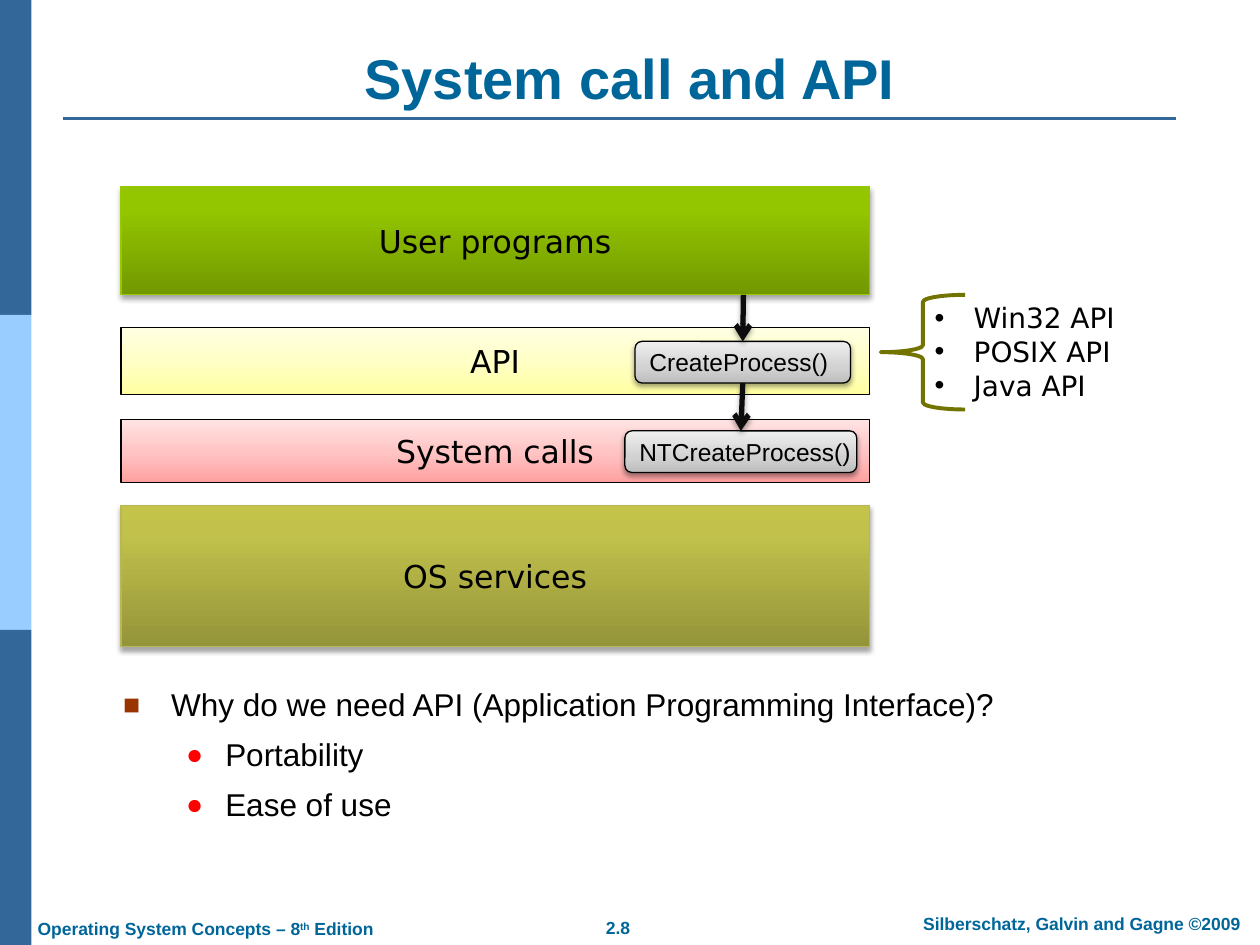
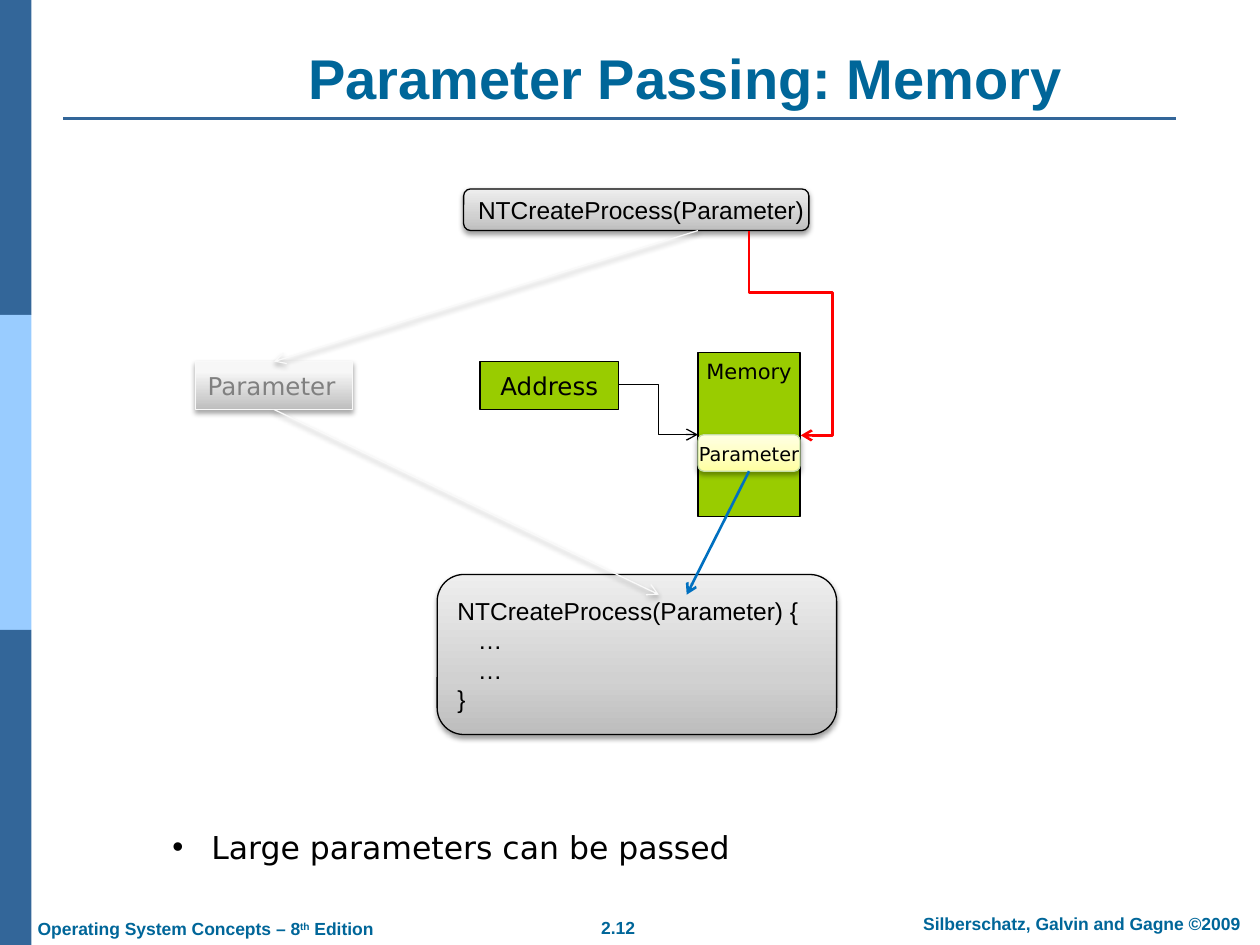
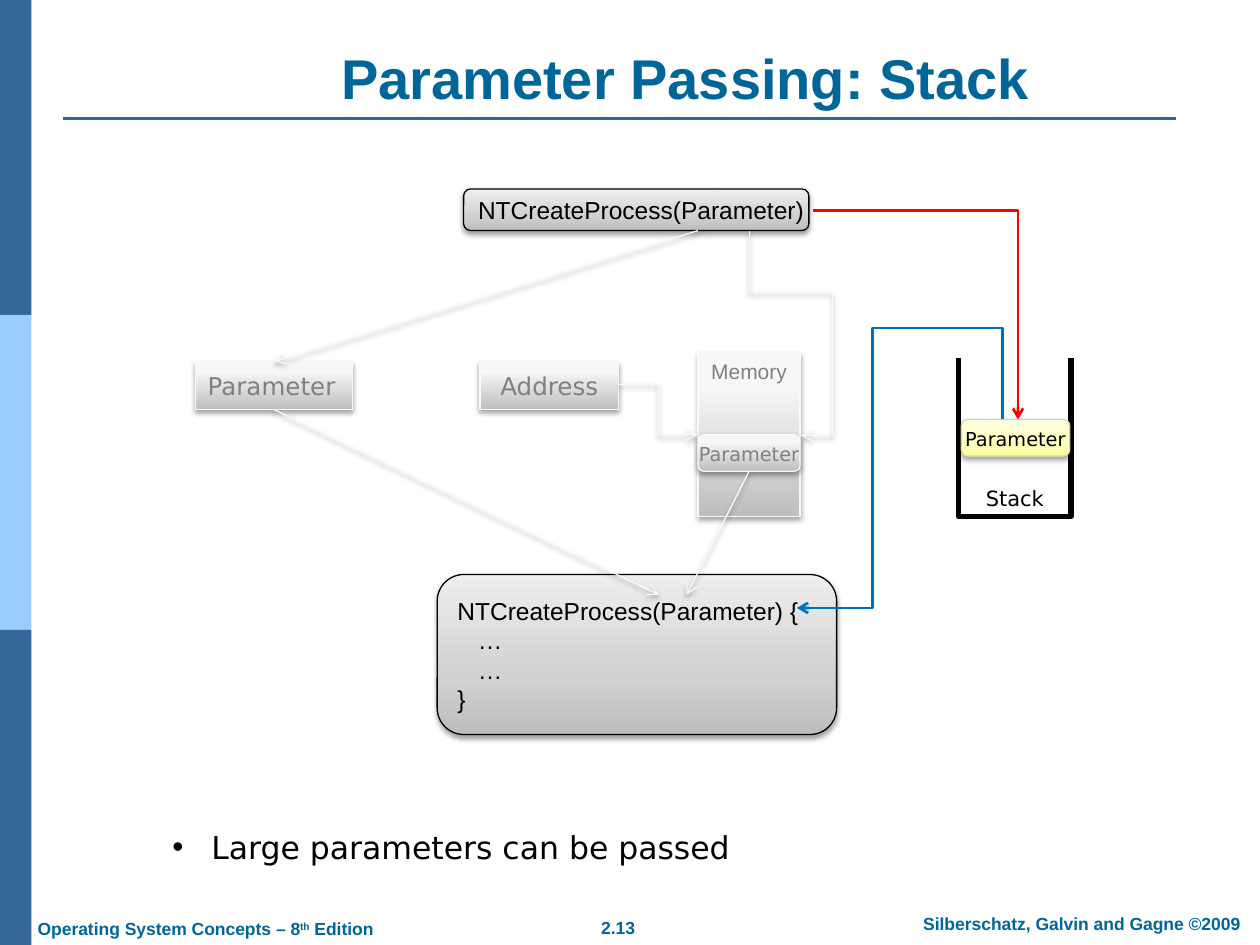
import collections
import lxml.etree
import pptx
import pptx.dml.color
import pptx.enum.shapes
import pptx.enum.text
import pptx.oxml.ns
import pptx.util

Inches, Pt = pptx.util.Inches, pptx.util.Pt
FORM = pptx.enum.shapes.MSO_SHAPE
LINK = pptx.enum.shapes.MSO_CONNECTOR
ALIGN = pptx.enum.text.PP_ALIGN
ANCHOR = pptx.enum.text.MSO_ANCHOR
LEFT, MID = ALIGN.LEFT, ALIGN.CENTER

# Theme
Look = collections.namedtuple("Look", "fill edge width ink shade", defaults=("000000", None))
Pen = collections.namedtuple("Pen", "color width shade", defaults=(None,))
SOFT, DEEP = (35, 1.8), (38, 1.6)  # shadow opacity in percent, offset in points
CREAM = ((0, "FFFFA2"), (50, "FFFFC6"), (100, "FFFFE3"))


class Theme:
    sans, wide = "Arial", "DejaVu Sans"
    title, body, item, code, label, small, foot = 32, 18, 16, 14, 12, 11, 10
    blue, band, pale = "006699", "336699", "99CCFF"
    black, square, disc = "000000", "993300", "FF0000"
    looks = {
        "green": Look(((0, "729800"), (80, "94C600"), (100, "95C700")), "96C800", 0.75, shade=SOFT),
        "olive": Look(((0, "94943A"), (80, "C1C14C"), (100, "C4C44A")), "B7B758", 0.75, shade=SOFT),
        "yellow": Look(CREAM, "000000", 0.75),
        "pink": Look(((0, "FFA0A0"), (50, "FFC5C5"), (100, "FFE3E3")), "000000", 0.75),
        "gray": Look(((0, "BDBDBD"), (35, "D1D1D1"), (100, "EEEEEE")), "000000", 0.75, shade=DEEP),
        "ghost": Look(((0, "BEBEBE"), (80, "F7F7F7"), (100, "F8F8F8")), "F9F9F9", 0.75, "808080", SOFT),
        "lime": Look("99CC00", "000000", 0.75),
        "cream": Look(CREAM, "C6DEA5", 0.75, shade=SOFT),
        "frame": Look(None, "000000", 3),
        "brace": Look(None, "737300", 2.25),
        "cover": Look("FFFFFF", None, 0),
        "band": Look(band, None, 0),
        "pale": Look(pale, None, 0),
    }
    pens = {
        "rule": Pen(band, 1.5),
        "bold": Pen("0D0D0D", 3, SOFT),
        "ghost": Pen("F9F9F9", 0.75, SOFT),
        "thin": Pen("000000", 0.75),
        "red": Pen("FF0000", 1.5),
        "blue": Pen("0070C0", 1.5),
    }
    # bullet: left margin, hanging indent, mark, colour, space before
    marks = {
        "dot": (0.31, 0.31, "•", None, 0),
        "square": (0.38, 0.38, "■", square, 7),
        "disc": (0.81, 0.31, "●", disc, 7),
    }


# Content
Box = collections.namedtuple(
    "Box", "at text look form size face align anchor",
    defaults=(FORM.RECTANGLE, Theme.body, Theme.wide, MID, ANCHOR.MIDDLE))


def tag(at, *text):
    return Box(at, text, "gray", FORM.ROUNDED_RECTANGLE, Theme.code, Theme.sans, LEFT)


def chip(at):
    return Box(at, ["Parameter"], "cream", FORM.ROUNDED_RECTANGLE, Theme.small, anchor=ANCHOR.TOP)


BOXES = {
    "os": Box((0.96, 4.01, 5.94, 1.12), ["OS services"], "olive"),
    "sys": Box((0.96, 3.33, 5.94, 0.5), ["System calls"], "pink"),
    "user": Box((0.96, 1.48, 5.94, 0.86), ["User programs"], "green"),
    "api": Box((0.96, 2.6, 5.94, 0.53), ["API"], "yellow"),
    "brace": Box((6.99, 2.34, 0.67, 0.91), [], "brace", FORM.LEFT_BRACE),
    "create": tag((5.04, 2.71, 1.71, 0.33), "CreateProcess()"),
    "native": tag((4.96, 3.42, 1.84, 0.33), "NTCreateProcess()"),
    "call": tag((3.68, 1.5, 2.74, 0.33), "NTCreateProcess(Parameter)"),
    "code": tag((3.47, 4.56, 3.17, 1.27), "NTCreateProcess(Parameter) {", "   …", "   …", "}"),
    "value": Box((1.55, 2.87, 1.25, 0.38), ["Parameter"], "ghost", size=Theme.code, align=LEFT),
    "address": Box((3.81, 2.87, 1.1, 0.38), ["Address"], "lime", size=Theme.code),
    "memory": Box((5.54, 2.8, 0.81, 1.3), ["Memory"], "lime", size=Theme.label, anchor=ANCHOR.TOP),
    "chip": chip((5.54, 3.45, 0.81, 0.29)),
    "stack": Box((7.61, 2.8, 0.89, 1.3), ["Stack"], "frame", size=Theme.label, anchor=ANCHOR.BOTTOM),
    "cover": Box((7.57, 2.64, 0.99, 0.2), [], "cover"),
    "pushed": chip((7.63, 3.33, 0.86, 0.29)),
}

# Straight arrows: start, end, pen, joined start, joined end
ARROWS = {
    "enter": ((5.9, 2.34), (5.89, 2.72), "bold", None, ("create", 0)),
    "descend": ((5.89, 3.04), (5.88, 3.42), "bold", ("create", 2), ("native", 0)),
    "send": ((5.54, 1.83), (2.18, 2.87), "ghost", None, ("value", 0)),
    "fetch": ((2.18, 3.24), (5.23, 4.72), "ghost", ("value", 2), None),
    "load": ((5.95, 3.74), (5.45, 4.72), "blue", ("chip", 2), None),
}

# Bent arrows: frame, turn, flips, preset, adjustments, pen
BENDS = {
    "store": ((5.34, 2.44, 1.62, 0.41), 270, "h", "bentConnector4", (0.299, 1.617), "red"),
    "point": ((4.91, 3.05, 0.63, 0.4), 0, "", "bentConnector3", (0.5,), "thin"),
    "push": ((6.45, 1.67, 1.63, 1.66), 0, "", "bentConnector2", (), "red"),
    "pop": ((6.39, 3.26, 1.5, 1.63), 270, "hv", "bentConnector4", (-0.482, 0.631), "blue"),
}

KINDS = ((1.27, 6.52, 4.66, 0.4), Theme.body, Theme.wide, False,
         [("dot", "Large parameters can be passed")])

# Slides: title, title left, number, parts from back to front, lists.
# A part is a name, or a name with the changes it takes on that slide.
GHOST = {"look": "ghost"}
SLIDES = [
    ("System call and API", 0.5, "2.8",
     ["os", "sys", "user", "api", "brace", "create", "native", "descend", "enter"],
     [((7.32, 2.34, 1.7, 0.94), Theme.item, Theme.wide, False,
       [("dot", "Win32 API"), ("dot", "POSIX API"), ("dot", "Java API")]),
      ((0.88, 5.39, 9, 1.68), Theme.body, Theme.sans, True,
       [("square", "Why do we need API (Application Programming Interface)?"),
        ("disc", "Portability"), ("disc", "Ease of use")])]),
    ("Parameter Passing: Memory", 0.94, "2.12",
     ["call", "code", "value", "address", "memory", "send", "fetch", "store", "point",
      "chip", "load"],
     [KINDS]),
    ("Parameter Passing: Stack", 0.94, "2.13",
     ["call", "code", ("address", GHOST), ("memory", {"look": "ghost", "face": Theme.sans}),
      "stack", ("store", GHOST), ("point", GHOST), ("chip", GHOST), ("load", GHOST),
      "cover", "pushed", "push", "pop", "value", "send", "fetch"],
     [KINDS]),
]


# Helpers
def rgb(code):
    return pptx.dml.color.RGBColor.from_string(code)


def node(owner, label, /, **attrs):
    item = lxml.etree.SubElement(owner, pptx.oxml.ns.qn("a:" + label))
    for key, value in attrs.items():
        item.set(key, str(value))
    return item


def shade(props, cast):
    """Fill the effect list with a downward shadow, or leave it empty."""
    found = props.find(pptx.oxml.ns.qn("a:effectLst"))
    effects = node(props, "effectLst") if found is None else found
    if cast:
        alpha, drop = cast
        outer = node(effects, "outerShdw", blurRad=Pt(3.1), dist=Pt(drop), dir=5400000,
                     rotWithShape=0)
        node(node(outer, "srgbClr", val="000000"), "alpha", val=alpha * 1000)


def paint(shape, fill):
    if fill is None:
        shape.fill.background()
    elif isinstance(fill, str):
        shape.fill.solid()
        shape.fill.fore_color.rgb = rgb(fill)
    else:
        shape.fill.gradient()
        stops = shape._element.spPr.find(".//" + pptx.oxml.ns.qn("a:gsLst"))
        for old in list(stops):
            stops.remove(old)
        for spot, code in fill:
            node(node(stops, "gs", pos=spot * 1000), "srgbClr", val=code)
        shape.fill.gradient_angle = 90


def style(par, size, face, ink, align=LEFT, bold=False):
    par.alignment = align
    font = par.font
    font.size, font.name, font.bold = Pt(size), face, bold
    font.color.rgb = rgb(ink)


def draw_box(slide, box):
    look = Theme.looks[box.look]
    shape = slide.shapes.add_shape(box.form, *map(Inches, box.at))
    shape.shadow.inherit = False
    paint(shape, look.fill)
    if look.edge:
        shape.line.color.rgb = rgb(look.edge)
        shape.line.width = Pt(look.width)
    else:
        shape.line.fill.background()
    shade(shape._element.spPr, look.shade)
    if box.text:
        frame = shape.text_frame
        frame.word_wrap, frame.vertical_anchor = False, box.anchor
        for row, text in enumerate(box.text):
            par = frame.add_paragraph() if row else frame.paragraphs[0]
            par.add_run().text = text
            style(par, box.size, box.face, look.ink, box.align)
    return shape


def ink_line(line, name, head=True):
    pen = Theme.pens[name]
    line.line.color.rgb = rgb(pen.color)
    line.line.width = Pt(pen.width)
    if head:
        node(line.line._get_or_add_ln(), "tailEnd", type="arrow")
    shade(line._element.spPr, pen.shade)


def draw_line(slide, start, end, kind=LINK.STRAIGHT):
    return slide.shapes.add_connector(kind, *map(Inches, (*start, *end)))


def draw_bend(slide, at, turn, flips, preset, adjust, pen):
    left, top, width, height = at
    line = draw_line(slide, (left, top), (left + width, top + height), LINK.ELBOW)
    props = line._element.spPr
    frame = props.find(pptx.oxml.ns.qn("a:xfrm"))
    frame.set("rot", str(turn * 60000))
    for flip in flips:
        frame.set("flip" + flip.upper(), "1")
    shape = props.find(pptx.oxml.ns.qn("a:prstGeom"))
    shape.set("prst", preset)
    guides = shape.find(pptx.oxml.ns.qn("a:avLst"))
    if guides is None:
        guides = node(shape, "avLst")
    for rank, value in enumerate(adjust, 1):
        node(guides, "gd", name=f"adj{rank}", fmla=f"val {round(value * 100000)}")
    ink_line(line, pen)


def add_text(slide, at, wrap=False):
    frame = slide.shapes.add_textbox(*map(Inches, at)).text_frame
    frame.word_wrap = wrap
    return frame


def add_list(slide, at, size, face, wrap, items):
    frame = add_text(slide, at, wrap)
    for row, (mark, text) in enumerate(items):
        par = frame.add_paragraph() if row else frame.paragraphs[0]
        margin, hang, sign, color, gap = Theme.marks[mark]
        props = par._p.get_or_add_pPr()
        props.set("marL", str(Inches(margin)))
        props.set("indent", str(-Inches(hang)))
        if color:
            node(node(props, "buClr"), "srgbClr", val=color)
            node(props, "buSzPct", val=90000)
        node(props, "buFont", typeface=Theme.sans)
        node(props, "buChar", char=sign)
        if row and gap:
            par.space_before = Pt(gap)
        par.add_run().text = text
        style(par, size, face, Theme.black)


# Bands, rule, footers and title on every slide
def add_frame(slide, title, left, number):
    for row, look in enumerate(("band", "pale", "band")):
        draw_box(slide, Box((0, row * 2.5, 0.25, 2.5), [], look))
    ink_line(draw_line(slide, (0.5, 0.94), (9.33, 0.94)), "rule", head=False)
    texts = [
        ((4.66, 7.23, 0.49, 0.27), False, MID, [number], Theme.foot),
        ((7.1, 7.2, 2.97, 0.27), True, MID, ["Silberschatz, Galvin and Gagne ©2009"], Theme.foot),
        ((0.2, 7.24, 2.89, 0.27), False, LEFT,
         ["Operating System Concepts – 8", "th", " Edition"], Theme.foot),
        ((left, 0.3, 9, 0.63), True, MID, [title], Theme.title),
    ]
    for at, wrap, align, runs, size in texts:
        frame = add_text(slide, at, wrap)
        if size == Theme.title:
            frame.vertical_anchor = ANCHOR.BOTTOM
        par = frame.paragraphs[0]
        for text in runs:
            run = par.add_run()
            run.text = text
            if text == "th":
                run._r.get_or_add_rPr().set("baseline", "30000")
        style(par, size, Theme.sans, Theme.blue, align, True)


def add_part(slide, name, change, drawn):
    if name in BOXES:
        drawn[name] = draw_box(slide, BOXES[name]._replace(**change))
    elif name in BENDS:
        *route, pen = BENDS[name]
        draw_bend(slide, *route, change.get("look", pen))
    else:
        start, end, pen, tail, head = ARROWS[name]
        line = draw_line(slide, start, end)
        if tail:
            line.begin_connect(drawn[tail[0]], tail[1])
        if head:
            line.end_connect(drawn[head[0]], head[1])
        ink_line(line, change.get("look", pen))


def main():
    deck = pptx.Presentation()
    deck.slide_width, deck.slide_height = Inches(10), Inches(7.5)
    for title, left, number, parts, lists in SLIDES:
        slide = deck.slides.add_slide(deck.slide_layouts[6])
        add_frame(slide, title, left, number)
        drawn = {}
        for part in parts:
            name, change = (part, {}) if isinstance(part, str) else part
            add_part(slide, name, change, drawn)
        for block in lists:
            add_list(slide, *block)
    deck.save("out.pptx")


if __name__ == "__main__":
    main()
